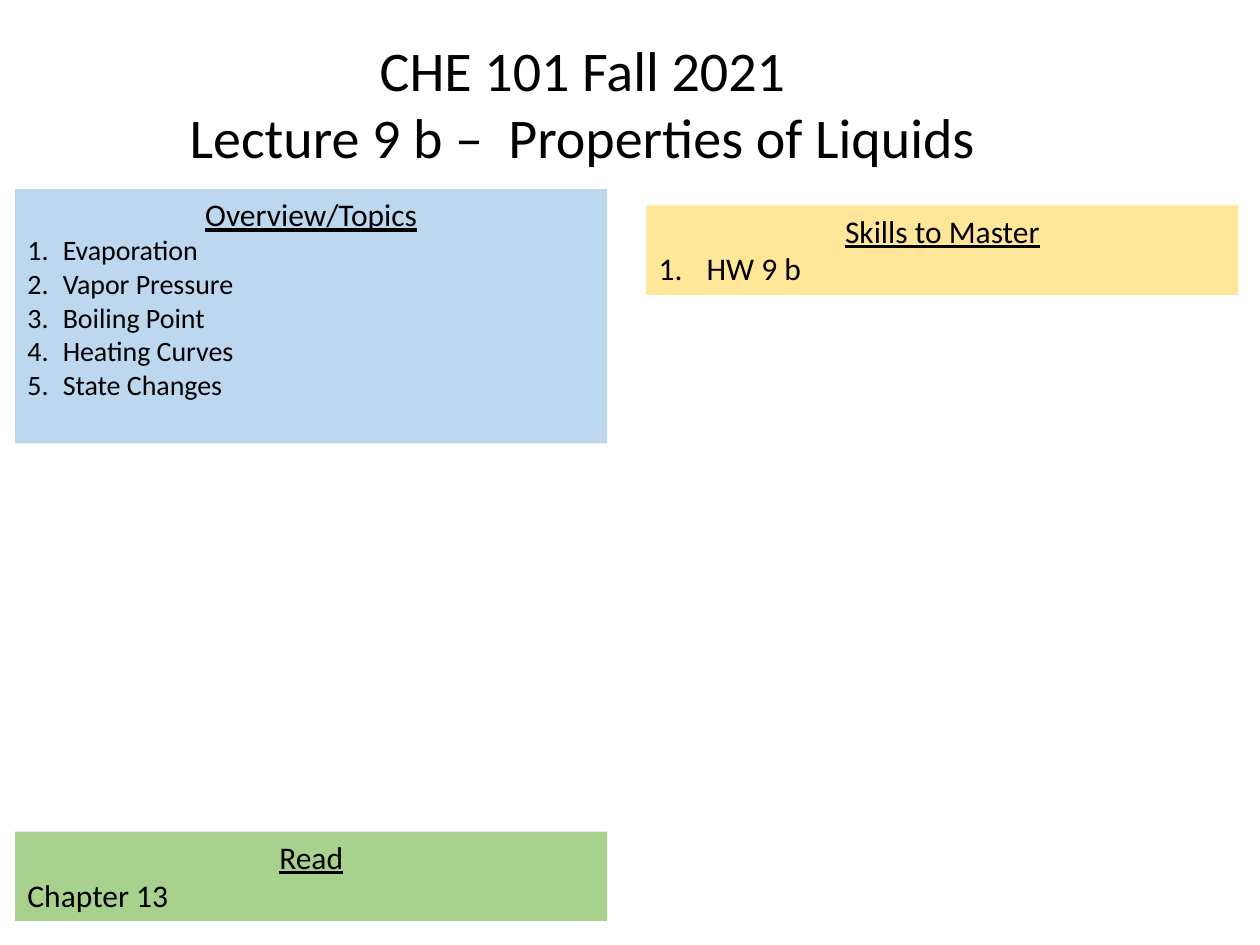
import pptx
import pptx.util
import pptx.dml.color
import pptx.enum.text
import pptx.oxml.ns
from lxml import etree

Inches = pptx.util.Inches
CENTER = pptx.enum.text.PP_ALIGN.CENTER
BLACK = "000000"


def color(code):
    return pptx.dml.color.RGBColor.from_string(code)


def style(para, size, under=False):
    for run in para.runs:
        font = run.font
        font.name = "Calibri"
        font.size = pptx.util.Pt(size)
        font.color.rgb = color(BLACK)
        font.underline = under


def number(para, indent):
    """Number a paragraph with a hanging indent."""
    props = para._p.get_or_add_pPr()
    props.set("marL", str(Inches(indent)))
    props.set("indent", str(-Inches(indent)))
    etree.SubElement(props, pptx.oxml.ns.qn("a:buFont"), typeface="+mj-lt")
    etree.SubElement(props, pptx.oxml.ns.qn("a:buAutoNum"), type="arabicPeriod")


def add_box(slide, left, top, width, height):
    return slide.shapes.add_textbox(
        Inches(left), Inches(top), Inches(width), Inches(height))


def add_title(slide, lines):
    frame = add_box(slide, 1.26, 0.23, 6.73, 1.18).text_frame
    frame.word_wrap = False
    frame.text = "\n".join(lines)
    for para in frame.paragraphs:
        para.alignment = CENTER
        style(para, 32)


def add_panel(slide, left, top, height, fill, head, items, size=18, indent=0):
    """Add a filled panel: centred heading, then items, numbered if indented."""
    box = add_box(slide, left, top, 4.7, height)
    box.fill.solid()
    box.fill.fore_color.rgb = color(fill)
    frame = box.text_frame
    frame.word_wrap = True
    frame.text = "\n".join([head] + items)
    title, *rows = frame.paragraphs
    title.alignment = CENTER
    style(title, 18, under=True)
    for row in rows:
        if indent:
            number(row, indent)
        style(row, size)


def main():
    deck = pptx.Presentation()
    deck.slide_width, deck.slide_height = Inches(10), Inches(7.5)
    slide = deck.slides.add_slide(deck.slide_layouts[6])

    # Panels
    topics = ["Evaporation", "Vapor Pressure", "Boiling Point",
              "Heating Curves", "State Changes"]
    add_panel(slide, 0.12, 1.5, 2.02, "BDD7EE", "Overview/Topics", topics,
              size=16, indent=0.28)
    add_panel(slide, 5.13, 1.63, 0.71, "FFE699", "Skills to Master",
              ["HW 9 b"], indent=0.38)
    add_panel(slide, 0.12, 6.6, 0.71, "A9D18E", "Read", ["Chapter 13"])

    # Title
    add_title(slide, ["CHE 101 Fall 2021",
                      "Lecture 9 b –  Properties of Liquids"])
    deck.save("out.pptx")


if __name__ == "__main__":
    main()
